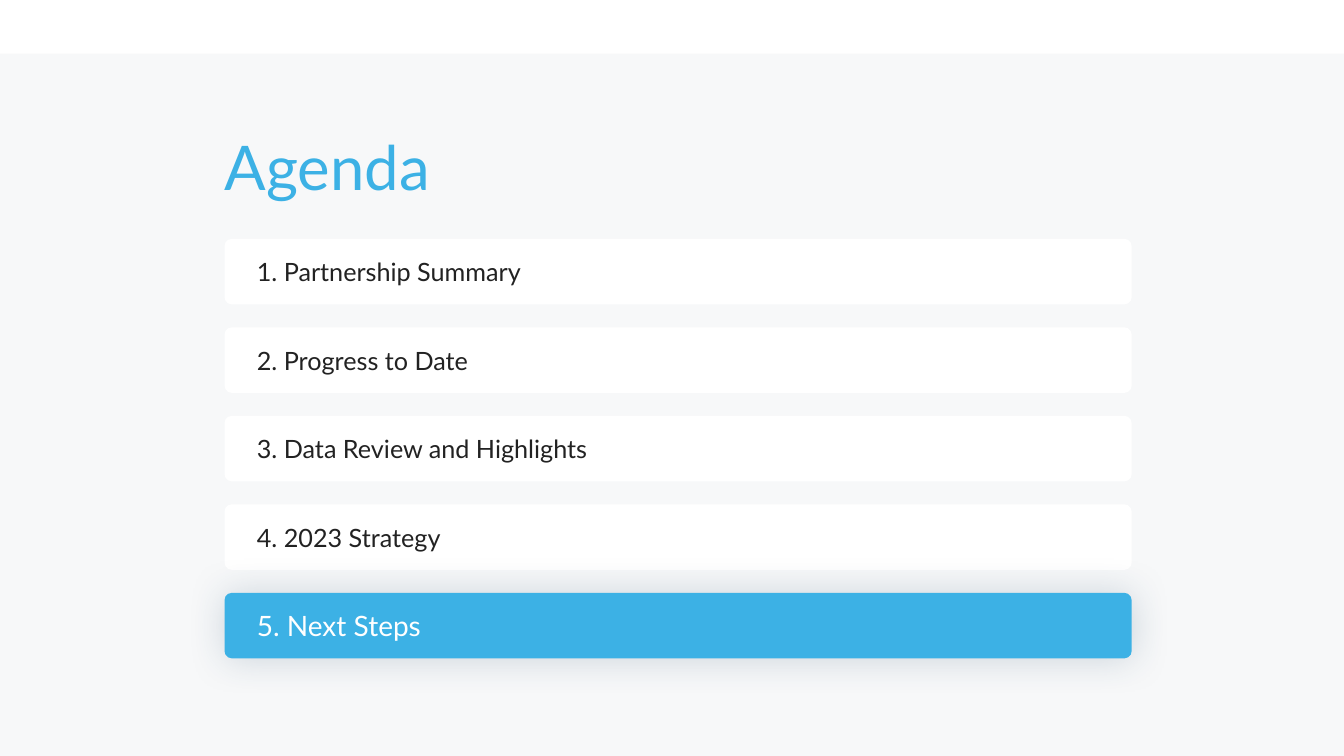
from lxml import etree
from pptx import Presentation
from pptx.dml.color import RGBColor
from pptx.enum.shapes import MSO_SHAPE
from pptx.enum.text import MSO_ANCHOR, MSO_AUTO_SIZE, PP_ALIGN
from pptx.oxml.ns import qn
from pptx.util import Cm, Pt

RECTANGLE = MSO_SHAPE.RECTANGLE
ROUNDED = MSO_SHAPE.ROUNDED_RECTANGLE
TOP, MIDDLE = MSO_ANCHOR.TOP, MSO_ANCHOR.MIDDLE
LEFT = PP_ALIGN.LEFT
NO_AUTOFIT = MSO_AUTO_SIZE.NONE

SLIDE_WIDTH, SLIDE_HEIGHT = 33.87, 19.05
FONT = "Lato"
SKY, WHITE, INK, MIST, GLOW = "3CB1E5", "FFFFFF", "222222", "F7F8F9", "214868"
TOPICS = [
    "Partnership Summary",
    "Progress to Date",
    "Data Review and Highlights",
    "2023 Strategy",
    "Next Steps",
]
CURRENT_TOPIC = 5


def rgb(value):
    return RGBColor.from_string(value)


def add_block(slide, preset, left, top, width, height, fill):
    block = slide.shapes.add_shape(preset, Cm(left), Cm(top), Cm(width), Cm(height))
    block.shadow.inherit = False
    block.fill.solid()
    block.fill.fore_color.rgb = rgb(fill)
    block.line.fill.background()
    return block


def write(frame, wording, size, color, anchor, insets):
    frame.word_wrap = True
    frame.auto_size = NO_AUTOFIT
    frame.vertical_anchor = anchor
    frame.margin_left, frame.margin_top, frame.margin_right, frame.margin_bottom = (
        Cm(inset) for inset in insets
    )
    paragraph = frame.paragraphs[0]
    paragraph.text = wording
    paragraph.alignment = LEFT
    paragraph.font.name = FONT
    paragraph.font.size = Pt(size)
    paragraph.font.color.rgb = rgb(color)
    return paragraph


def add_glow(card):
    effects = card._element.spPr.find(qn("a:effectLst"))
    shadow = etree.SubElement(
        effects, qn("a:outerShdw"), blurRad=str(Pt(27)), dist="0", dir="0",
        algn="ctr", rotWithShape="0",
    )
    tint = etree.SubElement(shadow, qn("a:srgbClr"), val=GLOW)
    etree.SubElement(tint, qn("a:alpha"), val="20000")


def add_backdrop(slide, left, top, width, height):
    backdrop = add_block(slide, RECTANGLE, left, top, width, height, MIST)
    slide.shapes._spTree.insert(2, backdrop._element)


def add_heading(slide, left, top, width, height):
    heading = slide.shapes.title
    heading.left, heading.top = Cm(left), Cm(top)
    heading.width, heading.height = Cm(width), Cm(height)
    paragraph = write(heading.text_frame, "Agenda", 44, SKY, TOP, (0, 0, 0, 0))
    paragraph.line_spacing = 0.9


def add_topics(slide, left, top, width, height):
    card_height = 1.65
    pitch = (height - card_height) / (len(TOPICS) - 1)
    for number, topic in enumerate(TOPICS, start=1):
        current = number == CURRENT_TOPIC
        card = add_block(
            slide, ROUNDED, left, top + (number - 1) * pitch, width, card_height,
            SKY if current else WHITE,
        )
        card.adjustments[0] = 0.11
        size, color = (20, WHITE) if current else (18, INK)
        write(card.text_frame, f"{number}. {topic}", size, color, MIDDLE,
              (0.76, 0.18, 0.18, 0.18))
        if current:
            add_glow(card)


def build_agenda(presentation):
    slide = presentation.slides.add_slide(presentation.slide_layouts[5])
    left, width = 5.66, 22.86
    add_backdrop(slide, 0, 1.35, SLIDE_WIDTH, SLIDE_HEIGHT - 1.35)
    add_heading(slide, left, 3.45, 6.99, 2.13)
    add_topics(slide, left, 6.02, width, 10.57)


def main():
    presentation = Presentation()
    presentation.slide_width = Cm(SLIDE_WIDTH)
    presentation.slide_height = Cm(SLIDE_HEIGHT)
    build_agenda(presentation)
    presentation.save("out.pptx")


if __name__ == "__main__":
    main()
